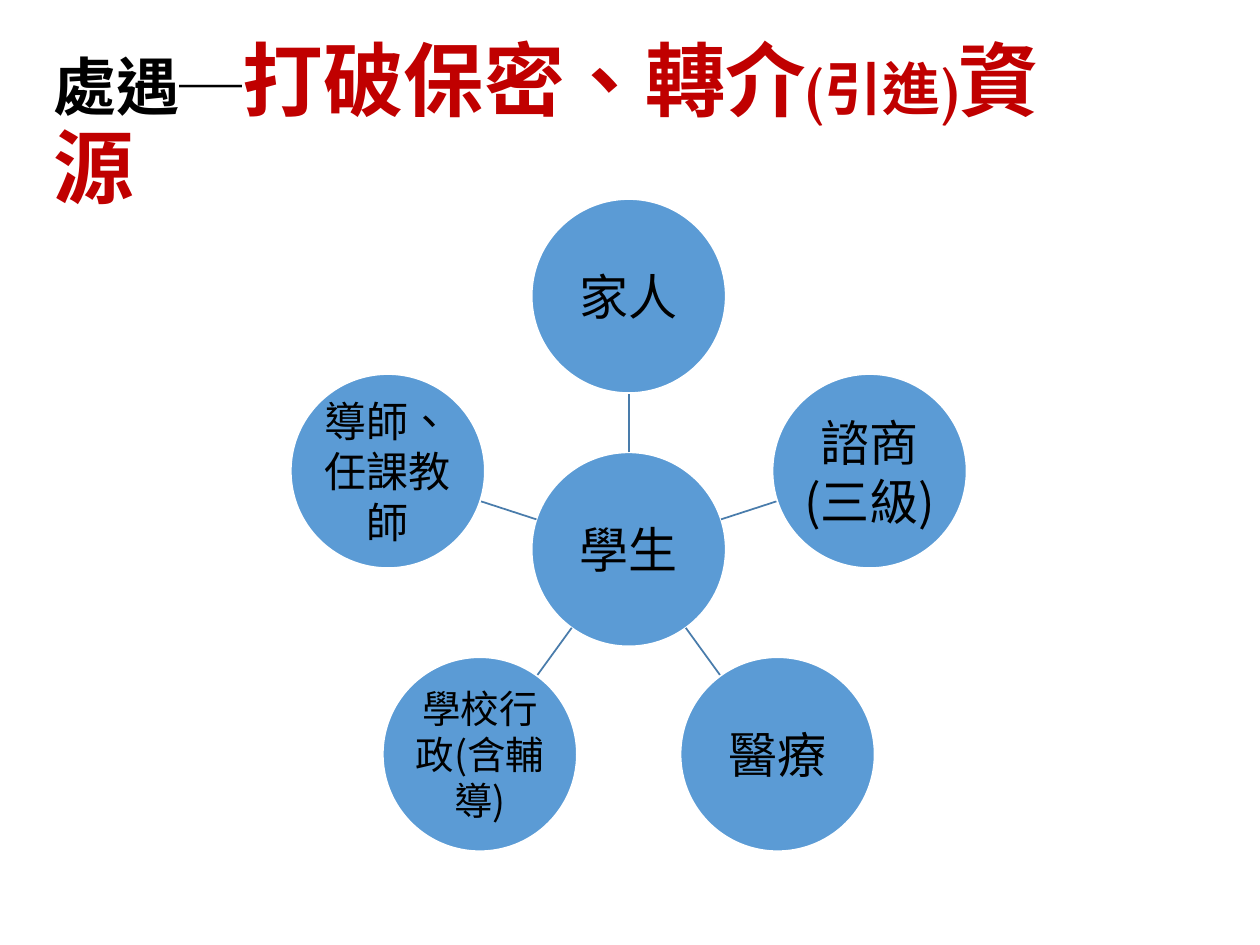
import math
from dataclasses import dataclass

from pptx import Presentation
from pptx import util as u
from pptx.dml.color import RGBColor
from pptx.enum import lang, shapes, text
from pptx.oxml import xmlchemy
from pptx.oxml.ns import qn

BLACK = RGBColor(0x00, 0x00, 0x00)
WHITE = RGBColor(0xFF, 0xFF, 0xFF)
RED = RGBColor(0xC0, 0x00, 0x00)
BLUE = RGBColor(0x5B, 0x9B, 0xD5)
STEEL = RGBColor(0x49, 0x7C, 0xAB)

TITLE_FONT = "Vollkorn"
BODY_FONT = "Noto Sans CJK SC"
HUB_X, HUB_Y = 4.99, 4.36
ORBIT = 2.01
RADIUS = 0.77


@dataclass(frozen=True)
class TitlePart:
    wording: str
    size: int
    color: RGBColor


@dataclass(frozen=True)
class Circle:
    wording: str
    size: int


TITLE = [
    TitlePart("處遇─", 36, BLACK),
    TitlePart("打破保密、轉介", 46, RED),
    TitlePart("(引進)", 33, RED),
    TitlePart("資源", 46, RED),
]
HUB = Circle("學生", 28)
HELPERS = [
    Circle("家人", 28),
    Circle("諮商(三級)", 28),
    Circle("醫療", 28),
    Circle("學校行政(含輔導)", 22),
    Circle("導師、任課教師", 24),
]


def add_span(para, wording: str, size: int, face: str, color: RGBColor, bold: bool = False) -> None:
    span = para.add_run()
    span.text = wording
    font = span.font
    font.size = u.Pt(size)
    font.bold = bold
    font.color.rgb = color
    font.language_id = lang.MSO_LANGUAGE_ID.TRADITIONAL_CHINESE
    font.name = face
    east_asian = xmlchemy.OxmlElement("a:ea")
    east_asian.set("typeface", face)
    span._r.get_or_add_rPr().find(qn("a:latin")).addnext(east_asian)


def add_title(page, parts: list[TitlePart]) -> None:
    box = page.shapes.add_textbox(u.Inches(0.33), u.Inches(0.29), u.Inches(8.62), u.Inches(1.45))
    frame = box.text_frame
    frame.word_wrap = True
    frame.vertical_anchor = text.MSO_ANCHOR.MIDDLE
    para = frame.paragraphs[0]
    para.line_spacing = 0.9
    for part in parts:
        add_span(para, part.wording, part.size, TITLE_FONT, part.color, bold=True)


def add_circle(page, circle: Circle, x: float, y: float) -> None:
    oval = page.shapes.add_shape(
        shapes.MSO_SHAPE.OVAL,
        u.Inches(x - RADIUS), u.Inches(y - RADIUS), u.Inches(2 * RADIUS), u.Inches(2 * RADIUS),
    )
    oval.shadow.inherit = False
    oval.fill.solid()
    oval.fill.fore_color.rgb = BLUE
    oval.line.color.rgb = WHITE
    oval.line.width = u.Pt(1)
    frame = oval.text_frame
    frame.word_wrap = True
    frame.vertical_anchor = text.MSO_ANCHOR.MIDDLE
    frame.margin_left = frame.margin_right = u.Inches(0.02)
    frame.margin_top = frame.margin_bottom = u.Inches(0.02)
    para = frame.paragraphs[0]
    para.alignment = text.PP_ALIGN.CENTER
    add_span(para, circle.wording, circle.size, BODY_FONT, BLACK)


def orbit_point(angle: float, distance: float) -> tuple[float, float]:
    return HUB_X + distance * math.sin(angle), HUB_Y - distance * math.cos(angle)


def add_spoke(page, angle: float) -> None:
    start = orbit_point(angle, RADIUS)
    end = orbit_point(angle, ORBIT - RADIUS)
    spoke = page.shapes.add_connector(
        shapes.MSO_CONNECTOR.STRAIGHT, *(u.Inches(value) for value in start + end)
    )
    spoke.line.color.rgb = STEEL
    spoke.line.width = u.Pt(1)
    spoke._element.spPr.append(xmlchemy.OxmlElement("a:effectLst"))


def main() -> None:
    deck = Presentation()
    deck.slide_width = u.Inches(10)
    deck.slide_height = u.Inches(7.5)
    page = deck.slides.add_slide(deck.slide_layouts[6])
    add_title(page, TITLE)
    add_circle(page, HUB, HUB_X, HUB_Y)
    for index, helper in enumerate(HELPERS):
        angle = math.tau * index / len(HELPERS)
        add_spoke(page, angle)
        add_circle(page, helper, *orbit_point(angle, ORBIT))
    deck.save("out.pptx")


if __name__ == "__main__":
    main()
